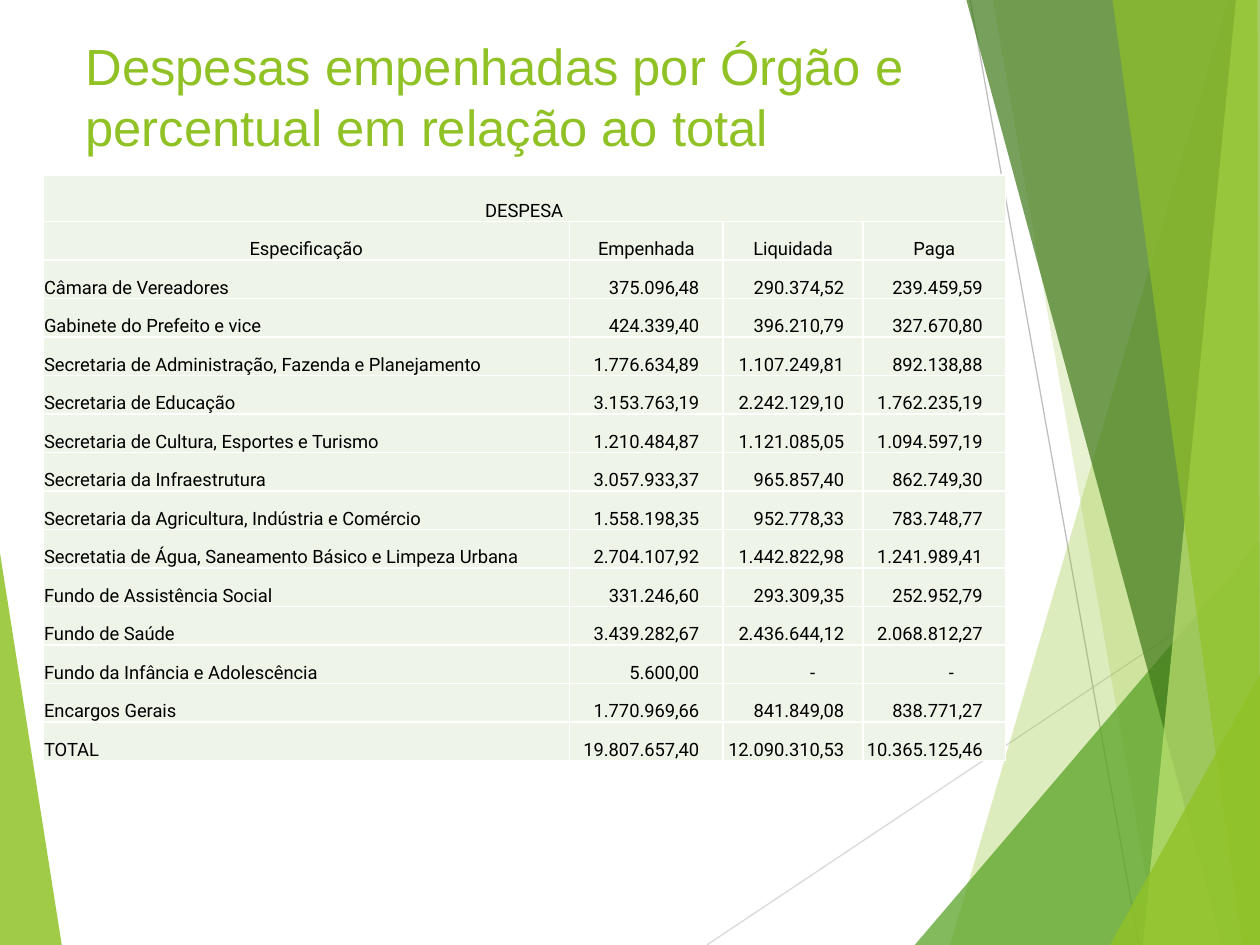
"""Build a slide with the municipal spending table by department."""
from typing import NamedTuple

from lxml.etree import SubElement as Sub
from pptx import Presentation
from pptx.dml.color import RGBColor
from pptx.enum.shapes import MSO_CONNECTOR as Conn
from pptx.enum.text import MSO_ANCHOR as Anchor, PP_ALIGN as Align
from pptx.oxml.ns import qn
from pptx.util import Inches, Pt

LIME = RGBColor(0x90, 0xC2, 0x26)
GREEN = RGBColor(0x54, 0xA0, 0x21)
DARK = RGBColor(0x3F, 0x78, 0x19)
PALE = RGBColor(0xC0, 0xE4, 0x74)
MINT = RGBColor(0xEE, 0xF4, 0xE8)
GREY = RGBColor(0xBF, 0xBF, 0xBF)
SILVER = RGBColor(0xD9, 0xD9, 0xD9)
BLACK = RGBColor(0, 0, 0)


class Facet(NamedTuple):
    points: list[tuple[float, float]]
    color: RGBColor
    alpha: int


class Ray(NamedTuple):
    start: tuple[float, float]
    end: tuple[float, float]
    color: RGBColor


class Expense(NamedTuple):
    name: str
    pledged: str
    settled: str
    paid: str


WEDGE = Facet([(0, 4.39), (0.49, 7.5), (0, 7.5)], LIME, 85)
RAYS = [
    Ray((5.61, 7.5), (10, 4.57), SILVER),
    Ray((7.7, 0), (9.04, 7.5), GREY),
]
FACETS = [
    Facet([(9.75, 0), (7.54, 7.5), (10, 7.5), (10, 0)], LIME, 30),
    Facet([(7.88, 0), (9.19, 7.5), (10, 7.5), (10, 0)], LIME, 20),
    Facet([(7.26, 7.5), (10, 4.29), (10, 7.5)], GREEN, 72),
    Facet([(7.67, 0), (9.7, 7.5), (10, 7.5), (10, 0)], DARK, 70),
    Facet([(9.81, 0), (9.07, 7.5), (10, 7.5), (10, 0)], PALE, 70),
    Facet([(8.83, 0), (9.86, 7.5), (10, 7.5), (9.98, 0)], LIME, 65),
    Facet([(8.81, 7.5), (10, 5.35), (10, 7.5)], LIME, 80),
]
HEADS = Expense("Especificação", "Empenhada", "Liquidada", "Paga")
ROWS = [
    Expense("Câmara de Vereadores", "375.096,48", "290.374,52", "239.459,59"),
    Expense("Gabinete do Prefeito e vice", "424.339,40", "396.210,79", "327.670,80"),
    Expense("Secretaria de Administração, Fazenda e Planejamento",
            "1.776.634,89", "1.107.249,81", "892.138,88"),
    Expense("Secretaria de Educação", "3.153.763,19", "2.242.129,10", "1.762.235,19"),
    Expense("Secretaria de Cultura, Esportes e Turismo",
            "1.210.484,87", "1.121.085,05", "1.094.597,19"),
    Expense("Secretaria da Infraestrutura", "3.057.933,37", "965.857,40", "862.749,30"),
    Expense("Secretaria da Agricultura, Indústria e Comércio",
            "1.558.198,35", "952.778,33", "783.748,77"),
    Expense("Secretatia de Água, Saneamento Básico e Limpeza Urbana",
            "2.704.107,92", "1.442.822,98", "1.241.989,41"),
    Expense("Fundo de Assistência Social", "331.246,60", "293.309,35", "252.952,79"),
    Expense("Fundo de Saúde", "3.439.282,67", "2.436.644,12", "2.068.812,27"),
    Expense("Fundo da Infância e Adolescência", "5.600,00", "-", "-"),
    Expense("Encargos Gerais", "1.770.969,66", "841.849,08", "838.771,27"),
    Expense("TOTAL", "19.807.657,40", "12.090.310,53", "10.365.125,46"),
]
WIDTHS = [4.18, 1.22, 1.11, 1.13]
INSETS = [0.01, 0.19, 0.15, 0.18]
DASH = 0.23
TOP = 0.37
HEIGHT = 4.65


def draw_facet(slide, facet: Facet) -> None:
    first, *rest = [(Inches(x), Inches(y)) for x, y in facet.points]
    pen = slide.shapes.build_freeform(*first)
    pen.add_line_segments(rest)
    shape = pen.convert_to_shape()
    shape.shadow.inherit = False
    shape.line.fill.background()
    shape.fill.solid()
    shape.fill.fore_color.rgb = facet.color
    tint = shape.fill._xPr.find(qn("a:solidFill"))[0]
    Sub(tint, qn("a:alpha"), val=str(facet.alpha * 1000))


def draw_ray(slide, ray: Ray) -> None:
    ends = [Inches(v) for v in ray.start + ray.end]
    line = slide.shapes.add_connector(Conn.STRAIGHT, *ends)
    line.line.color.rgb = ray.color
    line.line.width = Pt(0.75)
    Sub(line._element.spPr, qn("a:effectLst"))


def draw_title(slide, text: str) -> None:
    box = slide.shapes.add_textbox(Inches(0.58), Inches(0.23), Inches(7.65), Inches(1.17))
    frame = box.text_frame
    frame.word_wrap = True
    frame.vertical_anchor = Anchor.TOP
    frame.text = text
    font = frame.paragraphs[0].font
    font.name, font.size = "Arial", Pt(29)
    font.color.rgb = LIME


def style_cell(cell) -> None:
    props = cell._tc.get_or_add_tcPr()
    for side in ("lnL", "lnR", "lnT", "lnB"):
        edge = Sub(props, qn(f"a:{side}"), w=str(Pt(1)))
        Sub(Sub(edge, qn("a:solidFill")), qn("a:srgbClr"), val="FFFFFF")
    cell.fill.solid()
    cell.fill.fore_color.rgb = MINT
    cell.vertical_anchor = Anchor.BOTTOM
    cell.margin_left = cell.margin_right = cell.margin_top = Inches(0.01)
    cell.margin_bottom = 0


def write_cell(cell, text: str, align: Align) -> None:
    cell.text = text
    para = cell.text_frame.paragraphs[0]
    para.alignment = align
    para.font.name, para.font.size = "Roboto", Pt(10.5)
    para.font.color.rgb = BLACK


def draw_table(slide) -> None:
    count = len(ROWS) + 2
    table = slide.shapes.add_table(
        count, len(WIDTHS), Inches(0.34), Inches(1.39),
        Inches(sum(WIDTHS)), Inches(HEIGHT)).table
    table.first_row = table.horz_banding = False
    for col, width in zip(table.columns, WIDTHS):
        col.width = Inches(width)
    for i, row in enumerate(table.rows):
        row.height = Inches((HEIGHT - TOP) / (count - 1) if i else TOP)
    for cell in table.iter_cells():
        style_cell(cell)
    table.cell(0, 0).merge(table.cell(0, len(WIDTHS) - 1))
    write_cell(table.cell(0, 0), "DESPESA", Align.CENTER)
    for c, head in enumerate(HEADS):
        write_cell(table.cell(1, c), head, Align.CENTER)
    for r, row in enumerate(ROWS, 2):
        for c, text in enumerate(row):
            cell = table.cell(r, c)
            write_cell(cell, text, Align.RIGHT if c else Align.LEFT)
            cell.margin_right = Inches(INSETS[c] + (DASH if text == "-" else 0))


def main() -> None:
    deck = Presentation()
    deck.slide_width, deck.slide_height = Inches(10), Inches(7.5)
    slide = deck.slides.add_slide(deck.slide_layouts[6])
    draw_facet(slide, WEDGE)
    for ray in RAYS:
        draw_ray(slide, ray)
    for facet in FACETS:
        draw_facet(slide, facet)
    draw_title(slide, "Despesas empenhadas por Órgão e percentual em relação ao total")
    draw_table(slide)
    deck.save("out.pptx")


if __name__ == "__main__":
    main()
